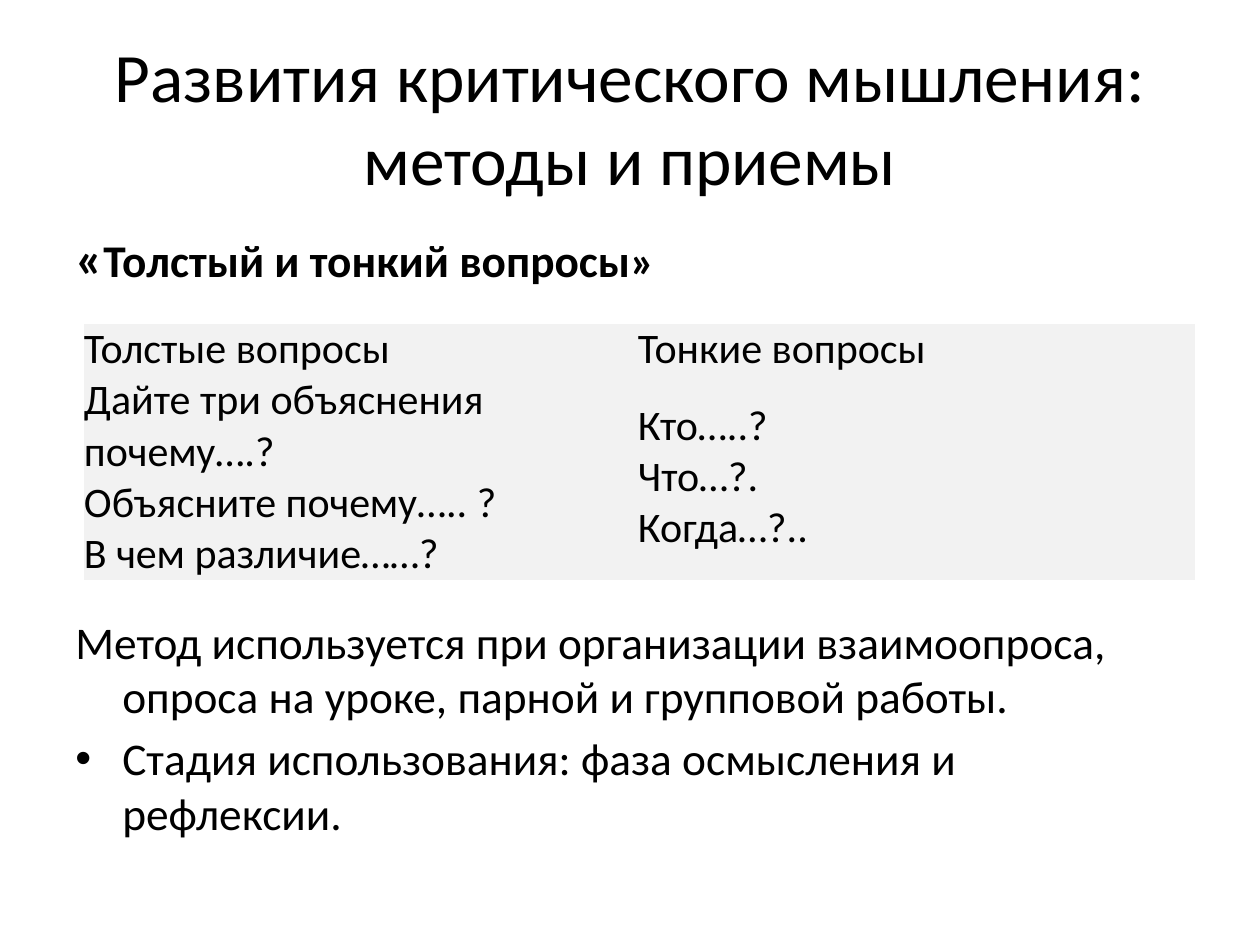
import pptx
import pptx.util
import pptx.dml.color
import pptx.enum.text
import pptx.oxml.ns
from lxml import etree

PX = 914400 // 126
FONT = "Calibri"
COLORS = {"text": "000000", "cell": "F2F2F2"}
PLAIN = "{2D5ABB26-0587-4C30-8999-92F81FD0307C}"  # table style without borders

TITLE = "Развития критического мышления: методы и приемы"
# runs (text, size), bold, bullet, space before in points
BODY = [
    ([("«", 29.6), ("Толстый и тонкий вопросы»", 25.9)], True, False, 0),
    ([("Метод используется при организации взаимоопроса, "
       "опроса на уроке, парной и групповой работы.", 25.9)], False, False, 186),
    ([("Стадия использования: фаза осмысления и рефлексии.", 25.9)],
     False, True, 4.5),
]
CELLS = [
    [["Толстые вопросы"], ["Тонкие вопросы"]],
    [["Дайте три объяснения почему….?", "Объясните почему….. ?",
      "В чем различие……?"],
     ["Кто…..?", "Что…?.", "Когда…?.."]],
]
COLS = [554, 557]
ROWS = [51, 205]
HANG = 47


def px(*nums):
    return [pptx.util.Emu(n * PX) for n in nums]


def color(name):
    return pptx.dml.color.RGBColor.from_string(COLORS[name])


def style(para, size=None, bold=False):
    font = para.font
    font.name = FONT
    font.bold = bold
    font.color.rgb = color("text")
    if size:
        font.size = pptx.util.Pt(size)


def indent(para, bullet):
    """Hang the first line, with or without a bullet."""
    props = para._p.get_or_add_pPr()
    props.set("marL", str(HANG * PX))
    props.set("indent", str(-HANG * PX))
    tag = pptx.oxml.ns.qn
    if bullet:
        etree.SubElement(props, tag("a:buFont"), typeface="Arial")
        etree.SubElement(props, tag("a:buChar"), char="•")
    else:
        etree.SubElement(props, tag("a:buNone"))


def add_title(slide):
    title = slide.shapes.title
    title.left, title.top, title.width, title.height = px(63, 38, 1134, 157)
    frame = title.text_frame
    frame.text = TITLE
    frame.vertical_anchor = pptx.enum.text.MSO_ANCHOR.MIDDLE
    para = frame.paragraphs[0]
    para.alignment = pptx.enum.text.PP_ALIGN.CENTER
    style(para, 39.6)


def add_body(slide):
    frame = slide.shapes.add_textbox(*px(63, 220, 1134, 624)).text_frame
    frame.word_wrap = True
    for i, (runs, bold, bullet, gap) in enumerate(BODY):
        para = frame.add_paragraph() if i else frame.paragraphs[0]
        indent(para, bullet)
        para.space_before = pptx.util.Pt(gap)
        style(para, runs[0][1], bold)
        for text, size in runs:
            run = para.add_run()
            run.text = text
            run.font.size = pptx.util.Pt(size)


def add_grid(slide):
    table = slide.shapes.add_table(
        len(ROWS), len(COLS), *px(84, 324, sum(COLS), sum(ROWS))).table
    table.first_row = table.horz_banding = False
    table._tbl.tblPr.find(pptx.oxml.ns.qn("a:tableStyleId")).text = PLAIN
    for col, width in zip(table.columns, px(*COLS)):
        col.width = width
    for row, height, texts in zip(table.rows, px(*ROWS), CELLS):
        row.height = height
        for cell, lines in zip(row.cells, texts):
            cell.margin_left = cell.margin_right = 0
            cell.margin_top = cell.margin_bottom = 0
            cell.vertical_anchor = pptx.enum.text.MSO_ANCHOR.MIDDLE
            cell.fill.solid()
            cell.fill.fore_color.rgb = color("cell")
            cell.text_frame.text = "\n".join(lines)
            for para in cell.text_frame.paragraphs:
                style(para, 24)


def main():
    deck = pptx.Presentation()
    deck.slide_width, deck.slide_height = px(1260, 945)
    slide = deck.slides.add_slide(deck.slide_layouts[5])
    add_title(slide)
    add_body(slide)
    add_grid(slide)
    deck.save("out.pptx")


if __name__ == "__main__":
    main()
